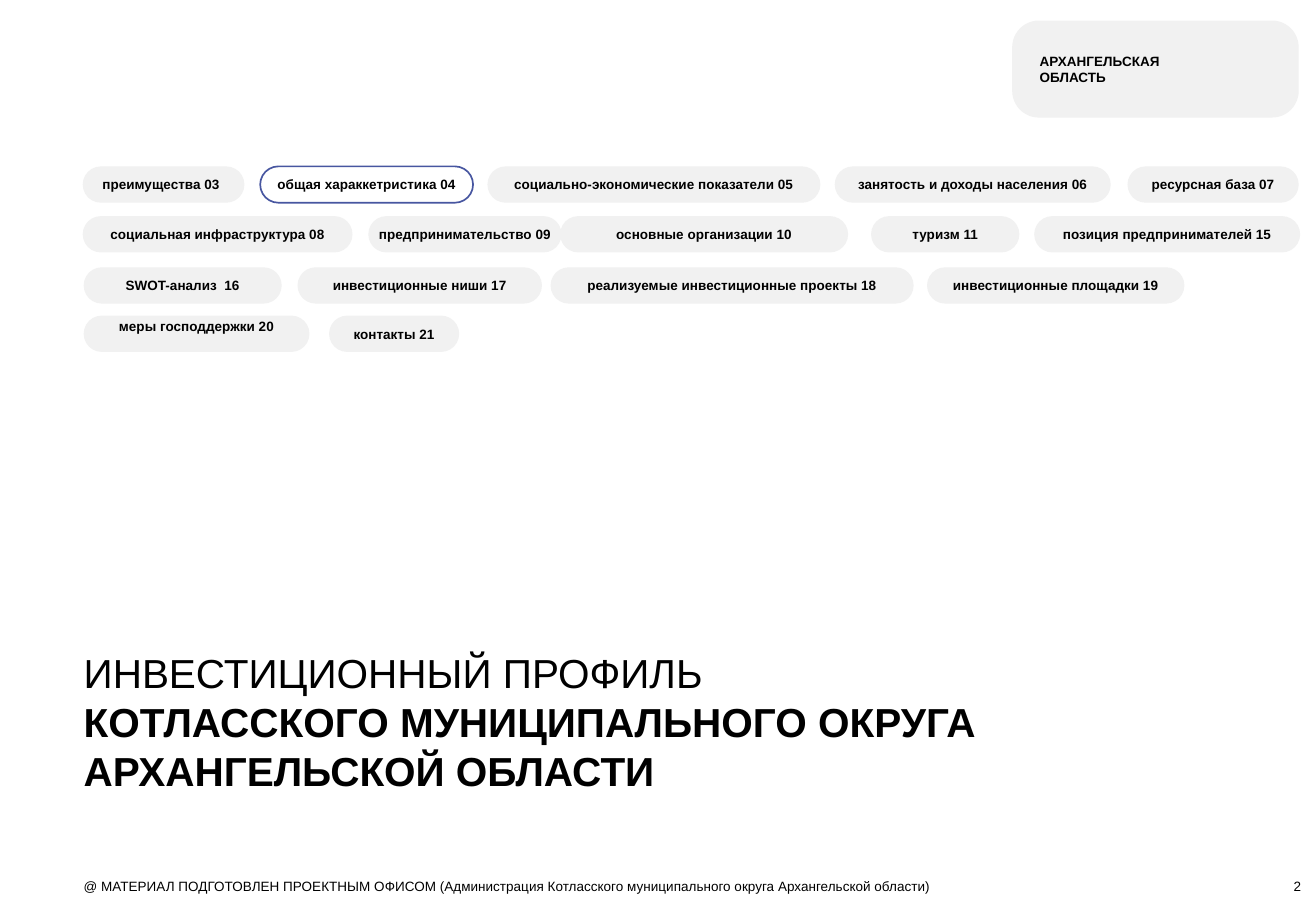
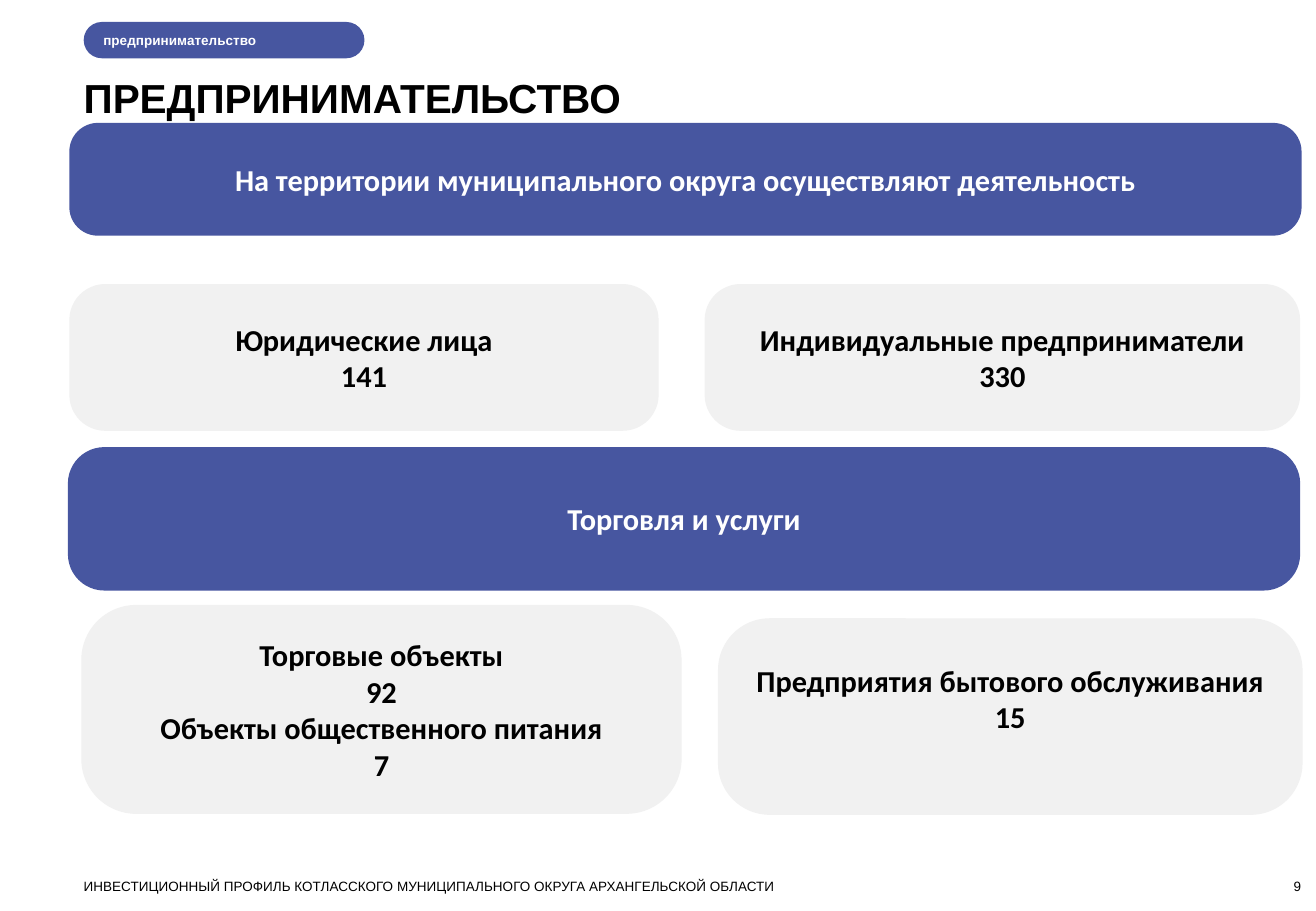
from pptx import Presentation
from pptx.dml.color import RGBColor
from pptx.enum.shapes import MSO_SHAPE
from pptx.enum.text import MSO_ANCHOR, PP_ALIGN
from pptx.util import Cm, Pt

ROUND = MSO_SHAPE.ROUNDED_RECTANGLE
TOP, MID, LOW = MSO_ANCHOR.TOP, MSO_ANCHOR.MIDDLE, MSO_ANCHOR.BOTTOM
LEFT, MIDST, RIGHT = PP_ALIGN.LEFT, PP_ALIGN.CENTER, PP_ALIGN.RIGHT
BLUE = RGBColor(0x47, 0x56, 0xA0)
GREY = RGBColor(0xF1, 0xF1, 0xF1)
BLACK = RGBColor(0, 0, 0)
WHITE = RGBColor(0xFF, 0xFF, 0xFF)
EDGE = 1.75
PILL = 0.76
SMALL = {"name": "Arial", "size": Pt(8), "bold": False}
LABEL = {**SMALL, "bold": True}
TITLE = {"name": "Arial", "size": Pt(24), "bold": True}
CARD = {"name": "Calibri", "size": Pt(18), "bold": True}
NONE = (0, 0, 0, 0)
INSET = (0.25, 0.13, 0.25, 0.13)


def write(shape, lines, font, color=BLACK, align=LEFT, anchor=TOP, inset=NONE):
    frame = shape.text_frame
    sides = zip(("left", "top", "right", "bottom"), inset)
    form = {f"margin_{side}": Cm(size) for side, size in sides}
    form.update(word_wrap=True, vertical_anchor=anchor)
    for key, value in form.items():
        setattr(frame, key, value)
    frame.text = "\n".join(lines)
    for para in frame.paragraphs:
        para.alignment = align
        for key, value in font.items():
            setattr(para.font, key, value)
        para.font.color.rgb = color
    return frame


def panel(slide, box, curve, fill, lines, font, align=MIDST, inset=NONE):
    shape = slide.shapes.add_shape(ROUND, *map(Cm, box))
    shape.shadow.inherit = False
    shape.adjustments[0] = curve
    if fill is None:
        shape.fill.background()
        shape.line.color.rgb = BLUE
        shape.line.width = Pt(1)
    else:
        shape.fill.solid()
        shape.fill.fore_color.rgb = fill
        shape.line.fill.background()
    color = WHITE if fill == BLUE else BLACK
    write(shape, lines, font, color, align, MID, inset)


deck = Presentation()
deck.slide_width, deck.slide_height = Cm(27.51), Cm(19.05)
blank = deck.slide_layouts[6]
cover, trade = [deck.slides.add_slide(blank) for _ in range(2)]

feet = [
    (cover, "@ МАТЕРИАЛ ПОДГОТОВЛЕН ПРОЕКТНЫМ ОФИСОМ (Администрация Котласского муниципального округа Архангельской области)", "2"),
    (trade, "ИНВЕСТИЦИОННЫЙ ПРОФИЛЬ КОТЛАССКОГО МУНИЦИПАЛЬНОГО ОКРУГА АРХАНГЕЛЬСКОЙ ОБЛАСТИ", "9"),
]
for slide, note, page in feet:
    foot = slide.shapes.add_textbox(Cm(EDGE), Cm(18.36), Cm(20.32), Cm(0.33))
    write(foot, [note], SMALL)
    count = slide.shapes.add_textbox(Cm(25.17), Cm(18.36), Cm(2.03), Cm(0.33))
    write(count, [page], SMALL, align=RIGHT, anchor=LOW)

rows = [
    (3.48, [
        (1.73, 3.38, "преимущества 03"),
        (5.44, 4.45, "общая характетристика 04".replace("тетр", "кетр")),
        (10.19, 6.96, "социально-экономические показатели 05"),
        (17.45, 5.77, "занятость и доходы населения 06"),
        (23.57, 3.58, "ресурсная база 07"),
    ]),
    (4.52, [
        (1.73, 5.64, "социальная инфраструктура 08"),
        (7.7, 4.04, "предпринимательство 09"),
        (11.71, 6.02, "основные организации 10"),
        (18.21, 3.1, "туризм 11"),
        (21.62, 5.56, "позиция предпринимателей 15"),
    ]),
    (5.59, [
        (1.75, 4.14, "SWOT-анализ  16"),
        (6.22, 5.11, "инвестиционные ниши 17"),
        (11.51, 7.59, "реализуемые инвестиционные проекты 18"),
        (19.38, 5.38, "инвестиционные площадки 19"),
    ]),
    (6.6, [
        (1.75, 4.72, "меры господдержки 20"),
        (6.88, 2.72, "контакты 21"),
    ]),
]
looks = {
    "03": {"align": LEFT, "inset": (0.3, 0, 0, 0)},
    "20": {"inset": (0, 0, 0, 0.32)},
}
for top, pills in rows:
    for left, width, text in pills:
        code = text[-2:]
        fill = None if code == "04" else GREY
        box = (left, top, width, PILL)
        panel(cover, box, 0.5, fill, [text], LABEL, **looks.get(code, {}))

panel(cover, (21.16, 0.43, 5.99, 2.03), 0.275, GREY, ["АРХАНГЕЛЬСКАЯ ОБЛАСТЬ"],
      LABEL, LEFT, (0.41, 0.13, 2.01, 0.13))
name = cover.shapes.add_textbox(Cm(EDGE), Cm(13.56), Cm(20.32), Cm(3.07))
frame = write(name, ["ИНВЕСТИЦИОННЫЙ ПРОФИЛЬ",
                     "КОТЛАССКОГО МУНИЦИПАЛЬНОГО ОКРУГА АРХАНГЕЛЬСКОЙ ОБЛАСТИ"], TITLE)
frame.paragraphs[0].font.bold = False

panel(trade, (EDGE, 0.46, 5.87, PILL), 0.5, BLUE, ["предпринимательство"],
      LABEL, LEFT, (0.3, 0, 0, 0))
head = trade.shapes.add_textbox(Cm(EDGE), Cm(1.52), Cm(20.32), Cm(1.02))
write(head, ["ПРЕДПРИНИМАТЕЛЬСТВО"], TITLE)

cards = [
    ((1.45, 2.57, 25.76, 2.36), 0.254, BLUE, INSET,
     ["На территории муниципального округа осуществляют деятельность"]),
    ((1.45, 5.94, 12.32, 3.07), 0.245, GREY, INSET, ["Юридические лица", "141"]),
    ((14.73, 5.94, 12.45, 3.07), 0.245, GREY, INSET,
     ["Индивидуальные предприниматели", "330"]),
    ((1.42, 9.35, 25.76, 3), 0.254, BLUE, INSET, ["Торговля и услуги"]),
    ((1.7, 12.65, 12.55, 4.37), 0.263, GREY, INSET,
     ["Торговые объекты", "92", "Объекты общественного питания", "7"]),
    ((15.01, 12.93, 12.22, 4.11), 0.263, GREY, (0.25, 0.13, 0.25, 0.9),
     ["Предприятия бытового обслуживания", "15"]),
]
for box, curve, fill, inset, lines in cards:
    panel(trade, box, curve, fill, lines, CARD, inset=inset)

deck.save("out.pptx")
